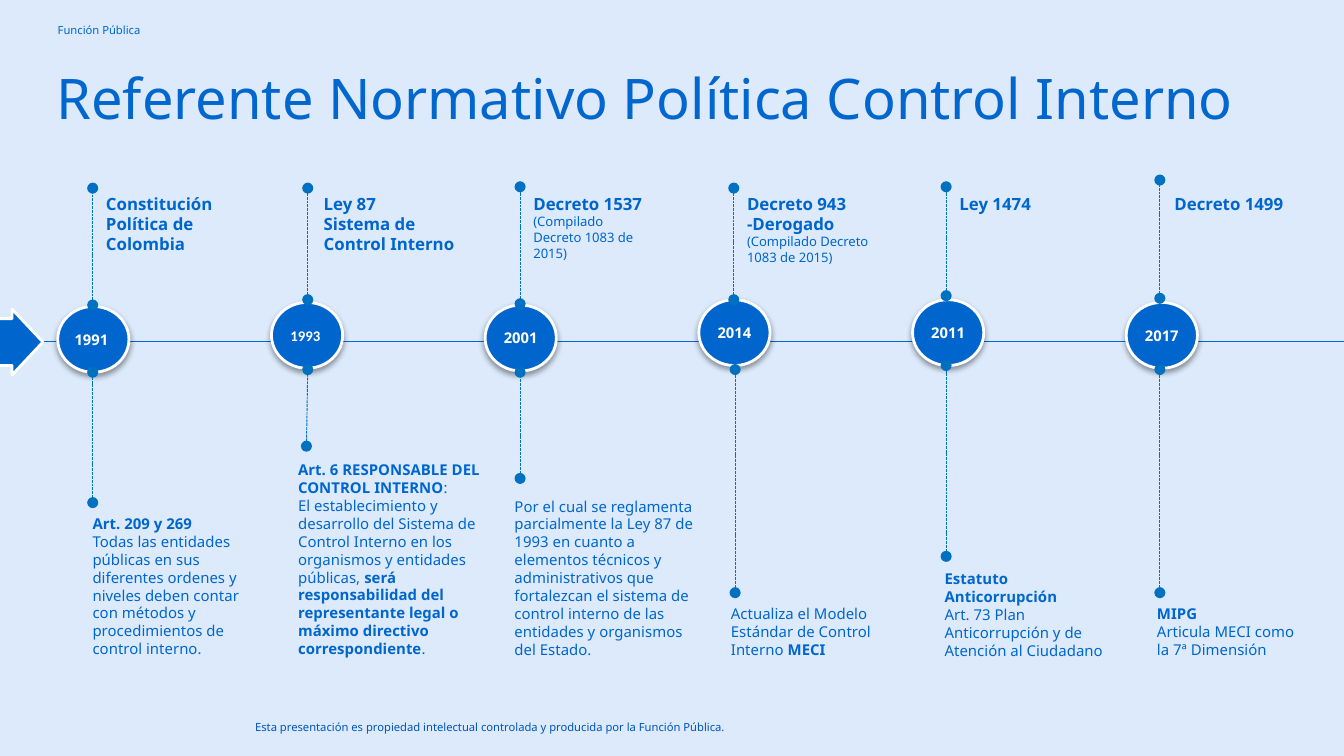
"""Build the timeline slide on the regulations behind the internal control policy."""
import pptx
import pptx.util
import pptx.dml.color
import pptx.enum.dml
import pptx.enum.shapes
import pptx.enum.text
import pptx.oxml
import pptx.oxml.ns

Inches = pptx.util.Inches
Pt = pptx.util.Pt
RGB = pptx.dml.color.RGBColor.from_string
SHAPES = pptx.enum.shapes.MSO_SHAPE
ANCHOR = pptx.enum.text.MSO_ANCHOR
ALIGN = pptx.enum.text.PP_ALIGN
STRAIGHT = pptx.enum.shapes.MSO_CONNECTOR.STRAIGHT
NS = pptx.oxml.ns.nsdecls("a")
COLORS = {"background": "DCEAFB", "blue": "0066CD", "title": "0166CD",
          "footer": "0054BC", "stem": "0070C0", "white": "FFFFFF"}
FONT = "Noto Sans"
PITCH = 1.59


def write(frame, paragraphs, color="blue", font=FONT, align=ALIGN.LEFT):
    """Fill a text frame with paragraphs of (text, size, bold) runs."""
    frame.word_wrap = True
    for index, runs in enumerate(paragraphs):
        paragraph = frame.add_paragraph() if index else frame.paragraphs[0]
        paragraph.alignment = align
        for text, size, bold in runs:
            run = paragraph.add_run()
            run.text = text
            run.font.name = font
            run.font.size = Pt(size)
            run.font.bold = bold
            run.font.color.rgb = RGB(COLORS[color])


def draw_line(x1, y1, x2, y2, color, width):
    """Draw a straight line without a shadow."""
    line = slide.shapes.add_connector(STRAIGHT, Inches(x1), Inches(y1), Inches(x2), Inches(y2))
    line.line.color.rgb = RGB(COLORS[color])
    line.line.width = Pt(width)
    line._element.spPr.append(pptx.oxml.parse_xml(f"<a:effectLst {NS}/>"))
    return line


milestones = [
    {"year": "1991 ", "circle": 2.28,
     "stems": [(0.69, 2.27, 0.69, 1.4), (0.69, 3.74, 0.69, 2.77)],
     "norm_box": (0.69, 1.39, 1.32, 0.56),
     "norm": [[("Constitución Política de Colombia", 9, True)]],
     "detail_box": (0.59, 3.78, 1.48, 1.18),
     "detail": [[("Art. 209 y 269", 8, True)],
                [("Todas las entidades públicas en sus diferentes ordenes y niveles deben contar "
                  "con métodos y procedimientos de control interno.", 8, False)]]},
    {"year": "1993 ", "font": "Calibri", "circle": 2.25,
     "stems": [(2.29, 2.23, 2.29, 1.4), (2.28, 3.32, 2.29, 2.75)],
     "norm_box": (2.31, 1.39, 1.32, 0.56),
     "norm": [[("Ley 87", 9, True)], [("Sistema de Control Interno", 9, True)]],
     "detail_box": (2.12, 3.38, 1.64, 1.58),
     "detail": [[("Art. 6 RESPONSABLE DEL CONTROL INTERNO", 8, True), (":", 8, False)],
                [("El establecimiento y desarrollo del Sistema de Control Interno en los "
                  "organismos y entidades públicas, ", 8, False),
                 ("será responsabilidad del representante legal o máximo directivo "
                  "correspondiente", 8, True), (".", 8, False)]]},
    {"year": "2001", "circle": 2.27,
     "stems": [(3.87, 2.26, 3.87, 1.39), (3.87, 3.56, 3.87, 2.77)],
     "norm_box": (3.87, 1.39, 1.02, 0.61),
     "norm": [[("Decreto 1537", 9, True)], [("(Compilado Decreto 1083 de 2015)", 7, False)]],
     "detail_box": (3.73, 3.65, 1.6, 1.31),
     "detail": [[("Por el cual se reglamenta parcialmente la Ley 87 de 1993 en cuanto a elementos "
                  "técnicos y administrativos que fortalezcan el sistema de control interno de las "
                  "entidades y organismos del Estado.", 8, False)]]},
    {"year": "2014", "circle": 2.23,
     "stems": [(5.46, 2.23, 5.46, 1.4), (5.47, 4.41, 5.47, 2.75)],
     "norm_box": (5.46, 1.39, 1.32, 0.64),
     "norm": [[("Decreto 943 -Derogado", 9, True)], [("(Compilado Decreto 1083 de 2015)", 7, False)]],
     "detail_box": (5.34, 4.45, 1.45, 0.5),
     "detail": [[("Actualiza el Modelo Estándar de Control Interno ", 8, False), ("MECI", 8, True)]]},
    {"year": "2011", "circle": 2.23,
     "stems": [(7.04, 2.2, 7.04, 1.39), (7.04, 4.14, 7.04, 2.72)],
     "norm_box": (7.04, 1.39, 1.19, 0.25),
     "norm": [[("Ley 1474", 9, True)]],
     "detail_box": (6.93, 4.19, 1.45, 0.77),
     "detail": [[("Estatuto Anticorrupción", 8, True)],
                [("Art. 73 Plan Anticorrupción y de Atención al Ciudadano", 8, False)]]},
    {"year": "2017", "circle": 2.25,
     "stems": [(8.63, 2.22, 8.63, 1.34), (8.63, 4.41, 8.63, 2.75)],
     "norm_box": (8.64, 1.39, 1.19, 0.25),
     "norm": [[("Decreto 1499", 9, True)]],
     "detail_box": (8.51, 4.45, 1.32, 0.5),
     "detail": [[("MIPG", 8, True)], [("Articula MECI como la 7ª Dimensión", 8, False)]]},
]

deck = pptx.Presentation()
deck.slide_width = Inches(10)
deck.slide_height = deck.slide_width * 9 // 16
slide = deck.slides.add_slide(deck.slide_layouts[5])
slide.background.fill.solid()
slide.background.fill.fore_color.rgb = RGB(COLORS["background"])

title = slide.shapes.title
title.left, title.top, title.width, title.height = map(Inches, (0.32, 0.42, 9.18, 0.61))
title.text_frame.vertical_anchor = ANCHOR.TOP
title.text_frame.auto_size = pptx.enum.text.MSO_AUTO_SIZE.NONE
write(title.text_frame, [[("Referente Normativo Política Control Interno", 30, False)]], "title")

footer = slide.shapes.add_textbox(Inches(1.8), Inches(5.25), Inches(5.01), Inches(0.37)).text_frame
footer.margin_bottom = Inches(0.1)
footer.vertical_anchor = ANCHOR.MIDDLE
write(footer, [[("Esta presentación es propiedad intelectual controlada y producida por la "
                 "Función Pública.", 6, False)]], "footer")

entity = slide.shapes.add_textbox(Inches(0.36), Inches(0.12), Inches(2.03), Inches(0.2)).text_frame
entity.margin_left = entity.margin_right = Inches(0.07)
entity.margin_top = entity.margin_bottom = Inches(0.04)
entity.vertical_anchor = ANCHOR.MIDDLE
write(entity, [[("Función Pública", 6, False)]])

draw_line(-0.08, 2.54, 10.05, 2.54, "blue", 0.75)
start = slide.shapes.add_shape(SHAPES.RIGHT_ARROW, Inches(-0.14), Inches(2.3), Inches(0.46), Inches(0.49))
start.adjustments[0] = 0.71
start.shadow.inherit = False
start.fill.solid()
start.fill.fore_color.rgb = RGB(COLORS["blue"])
start.line.color.rgb = RGB(COLORS["white"])
start.line.width = Pt(1.5)

for index, milestone in enumerate(milestones):
    circle = slide.shapes.add_shape(SHAPES.OVAL, Inches(0.43 + index * PITCH),
                                    Inches(milestone["circle"]), Inches(0.53), Inches(0.49))
    circle.fill.solid()
    circle.fill.fore_color.rgb = RGB(COLORS["blue"])
    circle.line.color.rgb = RGB(COLORS["white"])
    circle.line.width = Pt(1.5)
    circle._element.spPr.append(pptx.oxml.parse_xml(
        f'<a:effectLst {NS}><a:outerShdw blurRad="{Pt(3.1)}" dist="{Pt(1.6)}" dir="5400000" '
        'rotWithShape="0"><a:srgbClr val="000000"><a:alpha val="38000"/></a:srgbClr>'
        '</a:outerShdw></a:effectLst>'))
    year = circle.text_frame
    year.margin_left = year.margin_right = year.margin_top = year.margin_bottom = 0
    year.vertical_anchor = ANCHOR.MIDDLE
    write(year, [[(milestone["year"], 7.9, True)]], "white", milestone.get("font", FONT), ALIGN.CENTER)

    for ends in milestone["stems"]:
        stem = draw_line(*ends, "stem", 0.5)
        stem.line.dash_style = pptx.enum.dml.MSO_LINE.SQUARE_DOT
        for end in ("headEnd", "tailEnd"):
            stem.line._get_or_add_ln().append(pptx.oxml.parse_xml(f'<a:{end} {NS} type="oval"/>'))

    for part in ("norm", "detail"):
        note = slide.shapes.add_textbox(*map(Inches, milestone[f"{part}_box"])).text_frame
        write(note, milestone[part])
        note.auto_size = pptx.enum.text.MSO_AUTO_SIZE.SHAPE_TO_FIT_TEXT

deck.save("out.pptx")
